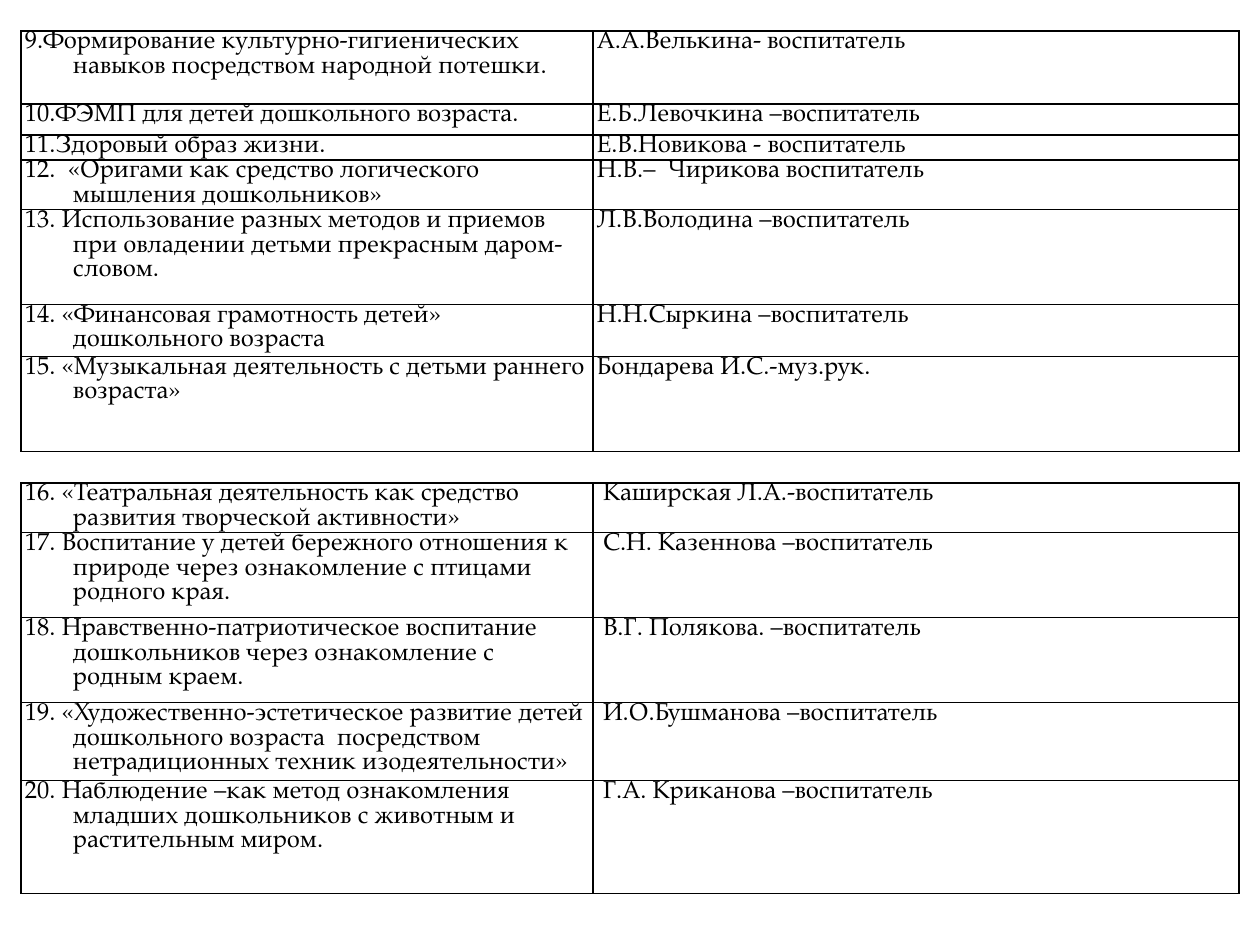
from lxml import etree
from pptx import Presentation
from pptx import util as u
from pptx.dml.color import RGBColor
from pptx.oxml.ns import qn

PX = 914400 // 126
BLACK = RGBColor(0, 0, 0)
FONT = "TeX Gyre Pagella"
COLUMNS = (572, 646)
LEFT, FRAME_HEIGHT = 21, 441
HANGING = 48
TOPIC_TABS, TEACHER_TABS = (15, 63, 354), (354,)

SECTIONS = [
    (31, [
        (73, "9.Формирование культурно-гигиенических навыков посредством народной потешки.",
         "А.А.Велькина- воспитатель"),
        (31, "10.ФЭМП для детей дошкольного возраста.", "Е.Б.Левочкина –воспитатель"),
        (25, "11.Здоровый образ жизни.", "Е.В.Новикова - воспитатель"),
        (47, "12.  «Оригами как средство логического мышления дошкольников»",
         "Н.В.–  Чирикова воспитатель"),
        (95, "13. Использование разных методов и приемов при овладении детьми прекрасным даром-словом.",
         "Л.В.Володина –воспитатель"),
        (52, "14. «Финансовая грамотность детей» дошкольного возраста",
         "Н.Н.Сыркина –воспитатель"),
        (95, "15. «Музыкальная деятельность с детьми раннего возраста»",
         "Бондарева И.С.-муз.рук."),
    ]),
    (483, [
        (6, "16. «Театральная деятельность как средство развития творческой активности»",
         " Каширская Л.А.-воспитатель"),
        (85, "17. Воспитание у детей бережного отношения к природе через ознакомление с птицами родного края.",
         " С.Н. Казеннова –воспитатель"),
        (85, "18. Нравственно-патриотическое воспитание дошкольников через ознакомление с родным краем.",
         " В.Г. Полякова. –воспитатель"),
        (78, "19. «Художественно-эстетическое развитие детей дошкольного возраста  посредством нетрадиционных техник изодеятельности»",
         " И.О.Бушманова –воспитатель"),
        (113, "20. Наблюдение –как метод ознакомления младших дошкольников с животным и растительным миром.",
         " Г.А. Криканова –воспитатель"),
    ]),
]


def add_borders(cell):
    properties = cell._tc.get_or_add_tcPr()
    for position, side in enumerate(("lnL", "lnR", "lnT", "lnB")):
        border = etree.Element(qn(f"a:{side}"), w=str(u.Pt(1)))
        fill = etree.SubElement(border, qn("a:solidFill"))
        etree.SubElement(fill, qn("a:srgbClr"), val=str(BLACK))
        properties.insert(position, border)


def fill_cell(cell, wording, tabs, hanging):
    cell.margin_left = cell.margin_right = 4 * PX
    cell.margin_top = cell.margin_bottom = 0
    cell.fill.background()
    add_borders(cell)
    paragraph = cell.text_frame.paragraphs[0]
    properties = paragraph._p.get_or_add_pPr()
    properties.set("marL", str(hanging * PX))
    properties.set("indent", str(-hanging * PX))
    tab_list = etree.SubElement(properties, qn("a:tabLst"))
    for tab in tabs:
        etree.SubElement(tab_list, qn("a:tab"), pos=str(tab * PX), algn="l")
    paragraph.line_spacing = u.Pt(14.15)
    run = paragraph.add_run()
    run.text = wording
    run.font.name = FONT
    run.font.size = u.Pt(14)
    run.font.color.rgb = BLACK


deck = Presentation()
deck.slide_width, deck.slide_height = u.Inches(10), u.Inches(7.5)
slide = deck.slides.add_slide(deck.slide_layouts[6])

for top, entries in SECTIONS:
    frame = slide.shapes.add_table(len(entries), 2, LEFT * PX, top * PX,
                                   sum(COLUMNS) * PX, FRAME_HEIGHT * PX)
    table = frame.table
    table.first_row = table.horz_banding = False
    for column, width in zip(table.columns, COLUMNS):
        column.width = width * PX
    for row, (height, topic, teacher) in zip(table.rows, entries):
        row.height = height * PX
        fill_cell(row.cells[0], topic, TOPIC_TABS, HANGING)
        fill_cell(row.cells[1], teacher, TEACHER_TABS, 0)
    frame.height = FRAME_HEIGHT * PX

deck.save("out.pptx")
